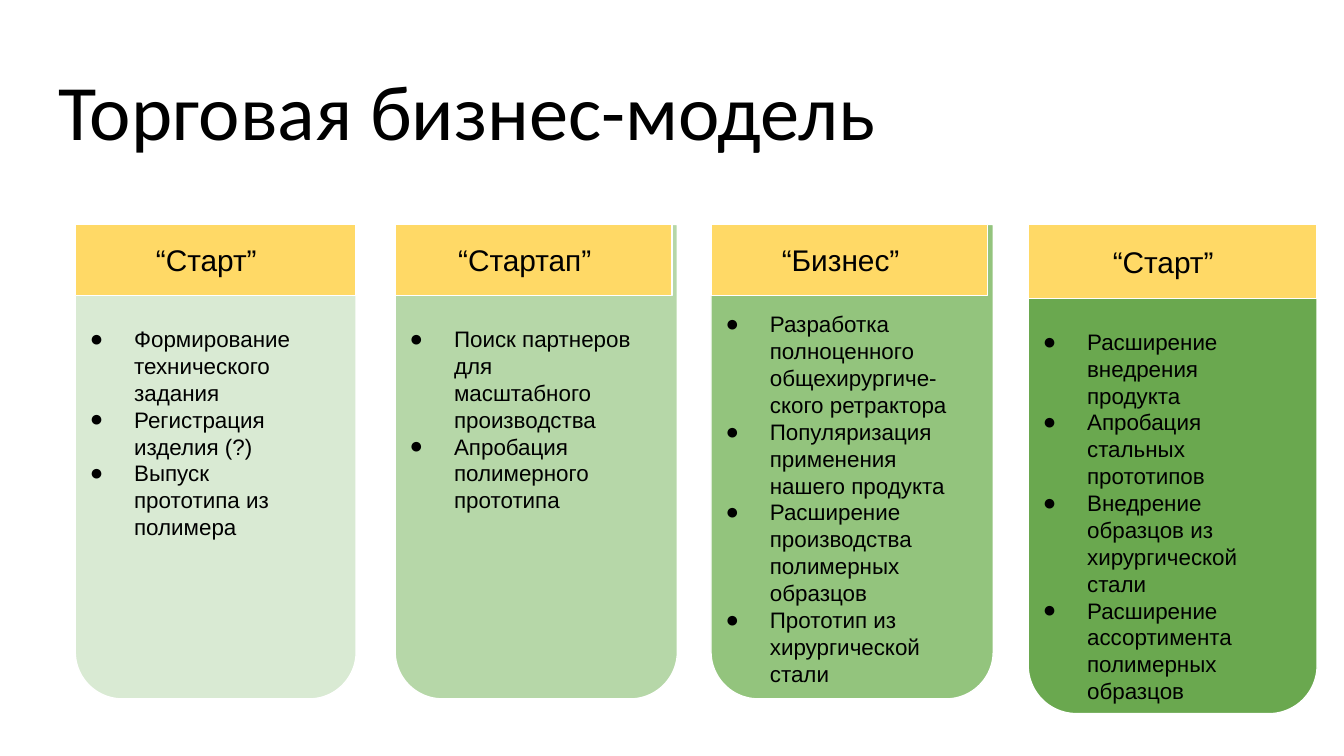
from lxml import etree
from pptx import Presentation
from pptx.dml.color import RGBColor
from pptx.enum.shapes import MSO_SHAPE
from pptx.enum.text import MSO_ANCHOR, PP_ALIGN
from pptx.oxml.ns import qn
from pptx.util import Inches, Pt

RECT = MSO_SHAPE.RECTANGLE
ROUNDED = MSO_SHAPE.ROUND_2_SAME_RECTANGLE
TOP, MIDDLE, BOTTOM = MSO_ANCHOR.TOP, MSO_ANCHOR.MIDDLE, MSO_ANCHOR.BOTTOM
LEFT, CENTER = PP_ALIGN.LEFT, PP_ALIGN.CENTER

BLACK = RGBColor(0x00, 0x00, 0x00)
WHITE = RGBColor(0xFF, 0xFF, 0xFF)
YELLOW = RGBColor(0xFF, 0xD9, 0x66)
GREENS = [
    RGBColor(0xD9, 0xEA, 0xD3),
    RGBColor(0xB6, 0xD7, 0xA8),
    RGBColor(0x93, 0xC4, 0x7D),
    RGBColor(0x6A, 0xA8, 0x4F),
]

CARD_TOP = 1.67
LIST_SHIFT = 0.16  # lists start this far left of their card

# heading, card (left, width, height), header (width, height),
# heading text width, list (top, width, height), list items
STAGES = [
    ("“Старт”", (0.56, 2.09, 3.53), (2.09, 0.53), 1.95, (2.32, 2.04, 1.94),
     ["Формирование технического задания",
      "Регистрация изделия (?)",
      "Выпуск прототипа из полимера"]),
    ("“Стартап”", (2.94, 2.1, 3.53), (2.06, 0.53), 1.93, (2.32, 2.02, 1.94),
     ["Поиск партнеров для масштабного производства",
      "Апробация полимерного прототипа"]),
    ("“Бизнес”", (5.29, 2.1, 3.53), (2.06, 0.53), 1.93, (2.21, 2.02, 2.41),
     ["Разработка полноценного общехирургиче-ского ретрактора",
      "Популяризация применения нашего продукта",
      "Расширение производства полимерных образцов",
      "Прототип из хирургической стали"]),
    ("“Старт”", (7.65, 2.15, 3.64), (2.15, 0.55), 2.01, (2.34, 2.15, 2.74),
     ["Расширение внедрения продукта",
      "Апробация стальных прототипов",
      "Внедрение образцов из хирургической стали",
      "Расширение ассортимента полимерных образцов"]),
]


def add_bullet(para):
    """Give the paragraph a round bullet with a hanging indent."""
    props = para._p.get_or_add_pPr()
    props.set("marL", str(Inches(0.5)))
    props.set("indent", str(Inches(-0.33)))
    color = etree.SubElement(props, qn("a:buClr"))
    etree.SubElement(color, qn("a:srgbClr"), val=str(BLACK))
    etree.SubElement(props, qn("a:buFont"), typeface="Arial")
    etree.SubElement(props, qn("a:buChar"), char="●")


class SlideBuilder:
    def __init__(self, page, font="Arial", color=BLACK):
        self.page = page
        self.font = font
        self.color = color

    def shape(self, kind, left, top, width, height, fill):
        shape = self.page.shapes.add_shape(
            kind, Inches(left), Inches(top), Inches(width), Inches(height))
        shape.shadow.inherit = False
        shape.fill.solid()
        shape.fill.fore_color.rgb = fill
        shape.line.color.rgb = WHITE
        shape.line.width = Pt(0.75)
        return shape

    def text(self, lines, left, top, width, height, size,
             font=None, align=LEFT, anchor=TOP, bullets=False):
        box = self.page.shapes.add_textbox(
            Inches(left), Inches(top), Inches(width), Inches(height))
        frame = box.text_frame
        frame.word_wrap = True
        frame.vertical_anchor = anchor
        frame.margin_left = frame.margin_right = Inches(0.1)
        frame.margin_top = frame.margin_bottom = Inches(0.1)
        for index, line in enumerate(lines):
            para = frame.add_paragraph() if index else frame.paragraphs[0]
            para.alignment = align
            if bullets:
                add_bullet(para)
            span = para.add_run()
            span.text = line
            span.font.size = Pt(size)
            span.font.name = font or self.font
            span.font.color.rgb = self.color

    def stage(self, heading, card, header, heading_width, listing, items, fill):
        left, width, height = card
        header_width, header_height = header
        list_top, list_width, list_height = listing
        body = self.shape(ROUNDED, left, CARD_TOP, width, height, fill)
        body.rotation = 180
        body.adjustments[0] = 0.167
        self.shape(RECT, left, CARD_TOP, header_width, header_height, YELLOW)
        self.text([heading], left, CARD_TOP, heading_width, header_height, 16,
                  align=CENTER, anchor=MIDDLE)
        self.text(items, left - LIST_SHIFT, list_top, list_width, list_height,
                  12, bullets=True)


def main():
    deck = Presentation()
    deck.slide_width = Inches(10)
    deck.slide_height = Inches(10 * 9 / 16)
    builder = SlideBuilder(deck.slides.add_slide(deck.slide_layouts[6]))
    builder.text(["Торговая бизнес-модель"], 0.34, 0.35, 9.32, 0.91, 42,
                 font="Calibri", anchor=BOTTOM)
    for stage, fill in zip(STAGES, GREENS):
        builder.stage(*stage, fill)
    deck.save("out.pptx")


if __name__ == "__main__":
    main()
